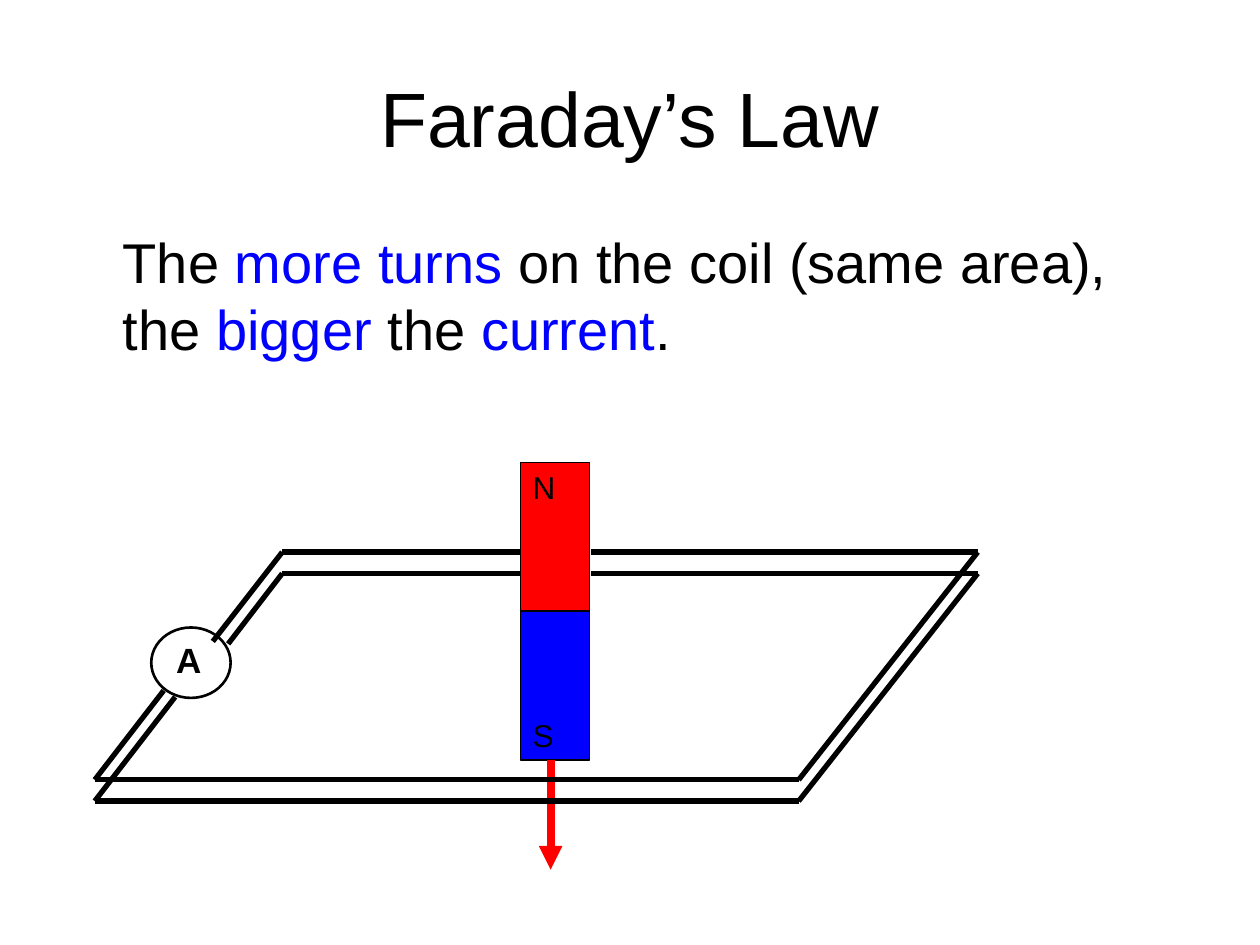
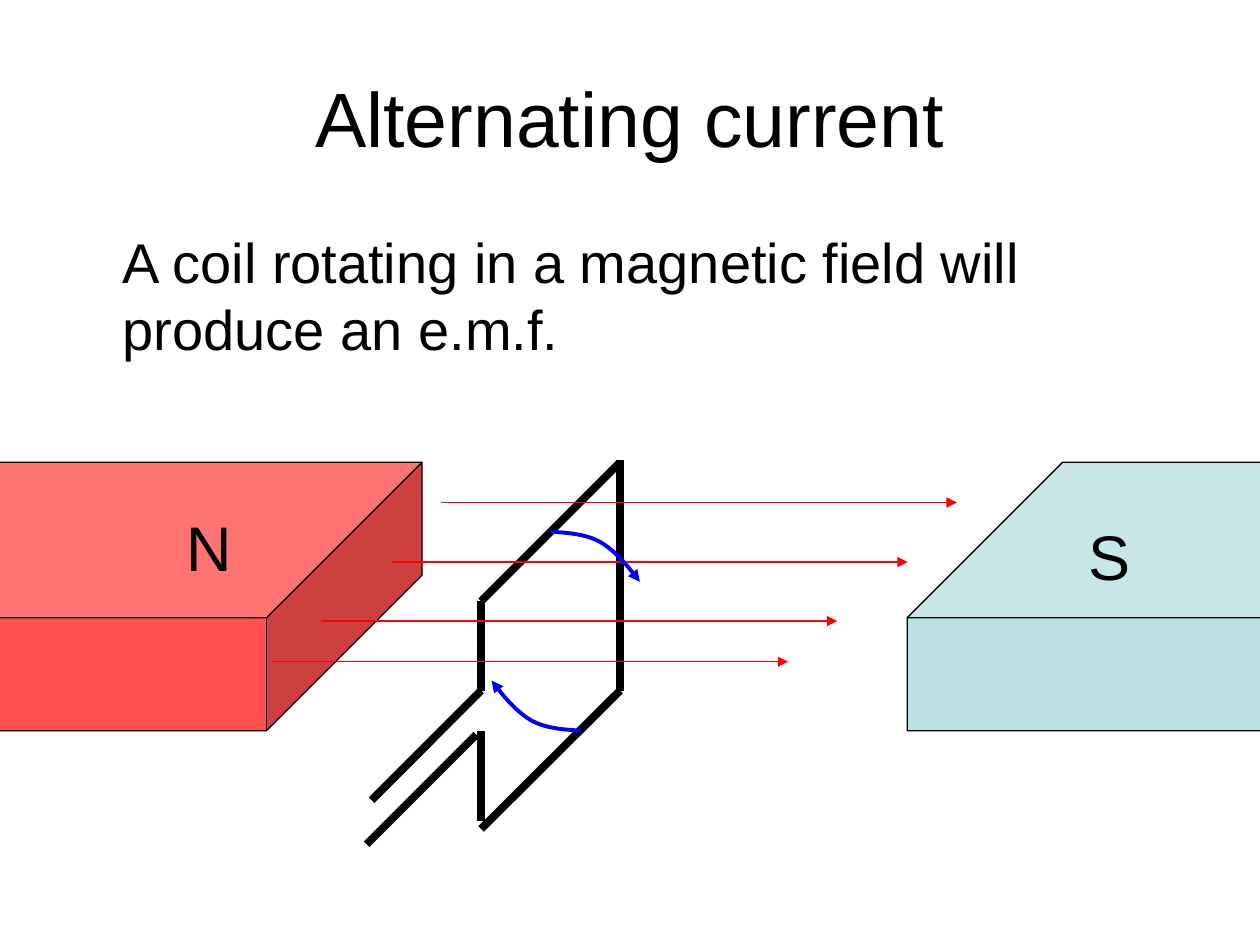
from lxml import etree
from pptx import Presentation
from pptx.dml.color import RGBColor
from pptx.enum.shapes import MSO_CONNECTOR, MSO_SHAPE
from pptx.enum.text import MSO_ANCHOR, MSO_AUTO_SIZE, PP_ALIGN
from pptx.oxml.ns import qn
from pptx.util import Cm, Pt

FONT = "Arial"
BLACK, RED, BLUE = "000000", "FF0000", "0000FF"
NORTH, SOUTH = "FF5050", "BBE0E3"


def add_text(frame, spans, size, bold=False):
    """Write (text, colour) spans into the first paragraph of a frame."""
    frame.word_wrap = True
    frame.auto_size = MSO_AUTO_SIZE.NONE
    para = frame.paragraphs[0]
    for text, color in spans:
        span = para.add_run()
        span.text = text
        span.font.name, span.font.size, span.font.bold = FONT, Pt(size), bold
        span.font.color.rgb = RGBColor.from_string(color)
    return para


def style_line(shape, color, width, arrow=False):
    """Set outline and optional end arrow, and remove the theme shadow."""
    shape.line.color.rgb = RGBColor.from_string(color)
    shape.line.width = Pt(width)
    properties = shape._element.spPr
    if arrow:
        etree.SubElement(properties.find(qn("a:ln")), qn("a:tailEnd"), type="triangle")
    etree.SubElement(properties, qn("a:effectLst"))


deck = Presentation()
deck.slide_width, deck.slide_height = Cm(25.4), Cm(19.05)

# Titles and statements
contents = [
    ("Faraday’s Law", [
        ("The ", BLACK), ("more turns ", BLUE), ("on the coil (same area), the", BLACK),
        (" bigger ", BLUE), ("the ", BLACK), ("current", BLUE), (".", BLACK)]),
    ("Alternating current", [
        ("A coil rotating in a magnetic field will produce an e.m.f.", BLACK)]),
]
for heading, statement in contents:
    page = deck.slides.add_slide(deck.slide_layouts[1])
    title, body = page.placeholders
    title.left, title.top, title.width, title.height = Cm(1.27), Cm(0.76), Cm(22.86), Cm(3.18)
    title.text_frame.vertical_anchor = MSO_ANCHOR.MIDDLE
    add_text(title.text_frame, [(heading, BLACK)], 44).alignment = PP_ALIGN.CENTER
    body.left, body.top, body.width, body.height = Cm(1.27), Cm(4.45), Cm(22.86), Cm(12.57)
    para = add_text(body.text_frame, statement, 32)
    paragraph_format = para._p.get_or_add_pPr()
    paragraph_format.set("marL", str(Cm(0.95)))
    paragraph_format.set("indent", "0")
    etree.SubElement(paragraph_format, qn("a:buNone"))

faraday, alternating = deck.slides

# Magnets and ammeter: page, shape, left, top, width, height, fill, line width
solids = [
    (faraday, MSO_SHAPE.RECTANGLE, 10.49, 9.32, 1.4, 3, RED, 0.75),
    (faraday, MSO_SHAPE.RECTANGLE, 10.49, 12.32, 1.4, 3, BLUE, 0.75),
    (faraday, MSO_SHAPE.OVAL, 3.05, 12.65, 1.6, 1.42, None, 1.5),
    (alternating, MSO_SHAPE.CUBE, -4.09, 9.32, 12.6, 5.41, NORTH, 0.75),
    (alternating, MSO_SHAPE.CUBE, 18.29, 9.32, 15.39, 5.41, SOUTH, 0.75),
]
for page, kind, left, top, width, height, fill, line_width in solids:
    solid = page.shapes.add_shape(kind, Cm(left), Cm(top), Cm(width), Cm(height))
    if fill:
        solid.fill.solid()
        solid.fill.fore_color.rgb = RGBColor.from_string(fill)
    else:
        solid.fill.background()
    if kind == MSO_SHAPE.CUBE:
        solid.adjustments[0] = 0.579
    style_line(solid, BLACK, line_width)

# Labels: page, text, left, top, width, height, size, bold
labels = [
    (faraday, "N", 10.49, 9.32, 1.4, 1.02, 18, False),
    (faraday, "S", 10.49, 14.3, 1.4, 1.02, 18, False),
    (faraday, "A", 3.3, 12.75, 1.6, 1.09, 20, True),
    (alternating, "N", 3.51, 10.13, 2.01, 1.78, 36, False),
    (alternating, "S", 21.69, 10.31, 2.01, 1.78, 36, False),
]
for page, text, left, top, width, height, size, bold in labels:
    box = page.shapes.add_textbox(Cm(left), Cm(top), Cm(width), Cm(height))
    add_text(box.text_frame, [(text, BLACK)], size, bold)

# Straight lines: page, from x, from y, to x, to y, colour, width, arrow
lines = [(faraday, 11.1, 15.32, 11.1, 17.53, RED, 4.5, True)]

# Two turns of the coil, each broken at the magnet and at the ammeter
turns = [
    (11.13, 15.72, (4.29, 12.93), (3.3, 13.92)),
    (11.56, 16.15, (4.6, 12.98), (3.53, 14.05)),
]
for back, front, meter_top, meter_bottom in turns:
    lines += [(faraday, *ends, BLACK, 3, False) for ends in [
        (10.49, back, 5.69, back),
        (*meter_top, 5.69, back),
        (16.1, front, 19.71, back),
        (1.91, front, *meter_bottom),
        (16.1, front, 1.91, front),
        (19.71, back, 11.91, back),
    ]]

rotating_coil = [
    (7.49, 16.13, 9.7, 13.92),
    (9.7, 13.92, 9.7, 12.12),
    (12.5, 9.32, 9.7, 12.12),
    (12.5, 13.92, 12.5, 9.27),
    (12.5, 13.92, 9.7, 16.71),
    (9.7, 16.56, 9.7, 14.73),
    (7.39, 17.02, 9.6, 14.81),
]
lines += [(alternating, *ends, BLACK, 4.5, False) for ends in rotating_coil]

field_starts = [(8.89, 10.13), (7.9, 11.33), (5.49, 13.34), (6.48, 12.52)]
lines += [(alternating, x, y, x + 10.4, y, RED, 0.75, True) for x, y in field_starts]

for page, x1, y1, x2, y2, color, width, arrow in lines:
    line = page.shapes.add_connector(MSO_CONNECTOR.STRAIGHT, Cm(x1), Cm(y1), Cm(x2), Cm(y2))
    style_line(line, color, width, arrow)

# Rotation arrows: two Bézier pieces, then the same curve turned by 180 degrees
bezier_pieces = [
    [(11.1, 10.72), (11.46, 10.74), (11.81, 10.77), (12.09, 10.92)],
    [(12.09, 10.92), (12.4, 11.1), (12.65, 11.4), (12.9, 11.73)],
]
STEPS = 10
curve = [bezier_pieces[0][0]]
for piece in bezier_pieces:
    for step in range(1, STEPS + 1):
        t = step / STEPS
        weights = ((1 - t) ** 3, 3 * t * (1 - t) ** 2, 3 * t ** 2 * (1 - t), t ** 3)
        curve.append(tuple(sum(w * point[axis] for w, point in zip(weights, piece))
                           for axis in (0, 1)))
turned_curve = [(22.81 - x, 25.45 - y) for x, y in curve]

for points in (curve, turned_curve):
    start, *rest = [(Cm(x), Cm(y)) for x, y in points]
    builder = alternating.shapes.build_freeform(*start)
    builder.add_line_segments(rest, close=False)
    rotation = builder.convert_to_shape()
    rotation.fill.background()
    style_line(rotation, BLUE, 2.25, arrow=True)

deck.save("out.pptx")
